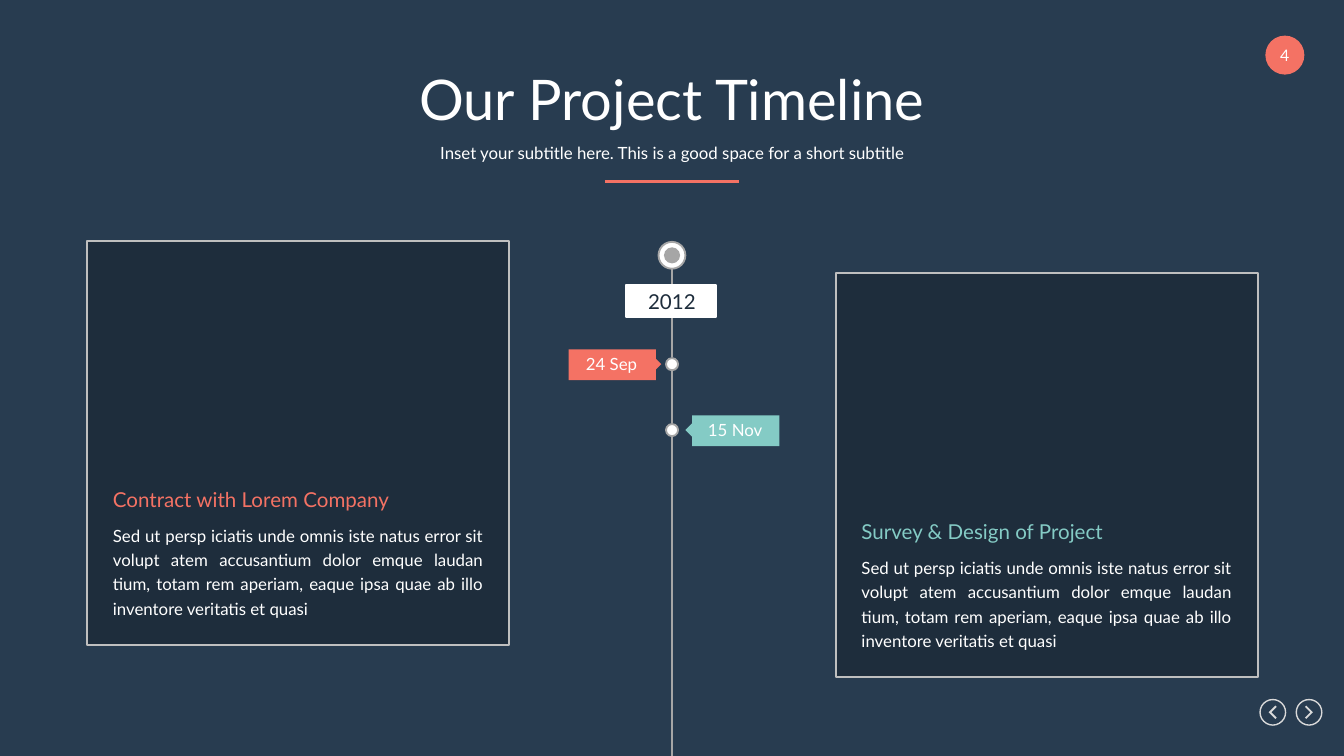
from dataclasses import dataclass

from lxml.etree import SubElement
from pptx import Presentation
from pptx.dml.color import RGBColor
from pptx.enum.shapes import MSO_CONNECTOR as Link, MSO_SHAPE as Geo
from pptx.enum.text import MSO_ANCHOR as Anchor, MSO_AUTO_SIZE as Fit, PP_ALIGN as Align
from pptx.oxml.ns import qn
from pptx.util import Inches, Pt


@dataclass(frozen=True)
class Theme:
    font: str = "Lato"
    back: str = "283C50"
    panel: str = "1E2D3C"
    white: str = "FFFFFF"
    coral: str = "F47264"
    teal: str = "84CBC5"
    edge: str = "BFBFBF"
    axis: str = "A6A6A6"
    nav: str = "D9D9D9"
    title: float = 30
    head: float = 11
    body: float = 9
    page: float = 8.5


T = Theme()
WIDE = 10
HIGH = WIDE * 9 / 16
STORY = ("Sed ut persp iciatis unde omnis iste natus error sit volupt atem "
         "accusantium dolor emque laudan tium, totam rem aperiam, eaque ipsa "
         "quae ab illo inventore veritatis et quasi")


def rgb(code):
    return RGBColor.from_string(code)


def paint(shape, fill=None, line=None, width=1):
    shape.shadow.inherit = False
    if fill:
        shape.fill.solid()
        shape.fill.fore_color.rgb = rgb(fill)
    else:
        shape.fill.background()
    if line:
        shape.line.color.rgb = rgb(line)
        shape.line.width = Pt(width)
    else:
        shape.line.fill.background()


def add_geo(slide, kind, box, fill=None, line=None, width=1, turn=0):
    shape = slide.shapes.add_shape(kind, *map(Inches, box))
    shape.rotation = turn
    paint(shape, fill, line, width)


def add_dot(slide, x, y, size, fill=None, line=None, width=1):
    """Circle centred on x, y."""
    box = (x - size / 2, y - size / 2, size, size)
    add_geo(slide, Geo.OVAL, box, fill, line, width)


def add_line(slide, x1, y1, x2, y2, color):
    line = slide.shapes.add_connector(Link.STRAIGHT, *map(Inches, (x1, y1, x2, y2)))
    line.line.color.rgb = rgb(color)
    line.line.width = Pt(1.5)
    SubElement(line._element.spPr, qn("a:effectLst"))


def write(frame, text, size, color, align=Align.CENTER, anchor=Anchor.TOP, lead=None):
    frame.word_wrap = True
    frame.auto_size = Fit.NONE
    frame.vertical_anchor = anchor
    frame.margin_left = frame.margin_right = frame.margin_top = frame.margin_bottom = 0
    para = frame.paragraphs[0]
    para.alignment = align
    para.space_before = Pt(0)
    if lead:
        para.line_spacing = Pt(lead)
    run = para.add_run()
    run.text = text
    run.font.name = T.font
    run.font.size = Pt(size)
    run.font.bold = False
    run.font.color.rgb = rgb(color)


def add_text(slide, box, *args, **style):
    write(slide.shapes.add_textbox(*map(Inches, box)).text_frame, *args, **style)


def header(slide, box, title, sub):
    x, y, w = box
    parts = ((title, T.title, 0, 0.5), (sub, T.body, 0.53, 0.25))
    for holder, (text, size, dy, h) in zip(slide.placeholders, parts):
        holder.left, holder.top = Inches(x), Inches(y + dy)
        holder.width, holder.height = Inches(w), Inches(h)
        write(holder.text_frame, text, size, T.white, anchor=Anchor.MIDDLE)
    mid = x + w / 2
    add_line(slide, mid - 0.5, y + 0.87, mid + 0.5, y + 0.87, T.coral)


def badge(slide, x, y, number):
    add_dot(slide, x, y, 0.29, T.coral)
    add_text(slide, (x - 0.12, y - 0.07, 0.24, 0.14), number, T.page, T.white)


def arrow(slide, x, y, way):
    """Ringed chevron that points left (-1) or right (1)."""
    add_dot(slide, x, y, 0.19, line=T.nav, width=0.75)
    spots = ((-0.03, -0.04), (-0.02, -0.05), (0.03, 0),
             (-0.02, 0.05), (-0.03, 0.04), (0.01, 0))
    pts = [(Inches(x + way * dx), Inches(y + dy)) for dx, dy in spots]
    pen = slide.shapes.build_freeform(*pts[0])
    pen.add_line_segments(pts[1:])
    paint(pen.convert_to_shape(), T.nav)


def card(slide, x, y, head, color):
    add_geo(slide, Geo.RECTANGLE, (x, y, 3.14, 3.01), T.panel, T.edge)
    add_text(slide, (x + 0.19, y + 1.83, 2.75, 0.19), head, T.head, color,
             align=Align.LEFT)
    add_text(slide, (x + 0.19, y + 2.09, 2.75, 0.71), STORY, T.body, T.white,
             align=Align.JUSTIFY, lead=13)


def flag(slide, x, y, side, date, color):
    """Date tag whose arrow points at x: left (-1) or right (1) of it."""
    mid = x + side * 0.37
    add_geo(slide, Geo.RECTANGLE, (mid - 0.32, y - 0.11, 0.65, 0.23), color)
    tip = x + side * 0.03
    add_geo(slide, Geo.ISOSCELES_TRIANGLE, (tip - 0.06, y - 0.03, 0.12, 0.06),
            color, turn=-90 * side)
    add_text(slide, (mid - 0.22, y - 0.08, 0.44, 0.15), date, T.body, T.white)


def axis(slide, x, top, end, year, events):
    add_dot(slide, x, top, 0.2, T.white, T.axis)
    add_dot(slide, x, top, 0.12, T.axis)
    start = top + 0.1
    for y, side, gap, date, color in events:
        add_line(slide, x, start, x, y - 0.05, T.axis)
        add_dot(slide, x, y, 0.09, T.white, T.axis)
        flag(slide, x + side * gap, y, side, date, color)
        start = y + 0.05
    add_line(slide, x, start, x, end, T.axis)
    add_geo(slide, Geo.RECTANGLE, (x - 0.34, top + 0.22, 0.67, 0.24), T.white, T.white)
    add_text(slide, (x - 0.19, top + 0.25, 0.38, 0.19), year, T.head, T.panel)


def main():
    deck = Presentation()
    deck.slide_width, deck.slide_height = Inches(WIDE), Inches(HIGH)
    slide = deck.slides.add_slide(deck.slide_layouts[0])
    slide.background.fill.solid()
    slide.background.fill.fore_color.rgb = rgb(T.back)

    header(slide, (0.65, 0.48, 8.7), "Our Project Timeline",
           "Inset your subtitle here. This is a good space for a short subtitle")
    badge(slide, 9.56, 0.41, "4")
    arrow(slide, 9.47, 5.3, -1)
    arrow(slide, 9.74, 5.3, 1)
    card(slide, 0.65, 1.79, "Contract with Lorem Company", T.coral)
    card(slide, 6.22, 2.03, "Survey & Design of Project", T.teal)
    axis(slide, WIDE / 2, 1.9, HIGH, "2012", (
        (2.71, -1, 0.08, "24 Sep", T.coral),
        (3.2, 1, 0.1, "15 Nov", T.teal),
    ))
    deck.save("out.pptx")


if __name__ == "__main__":
    main()
